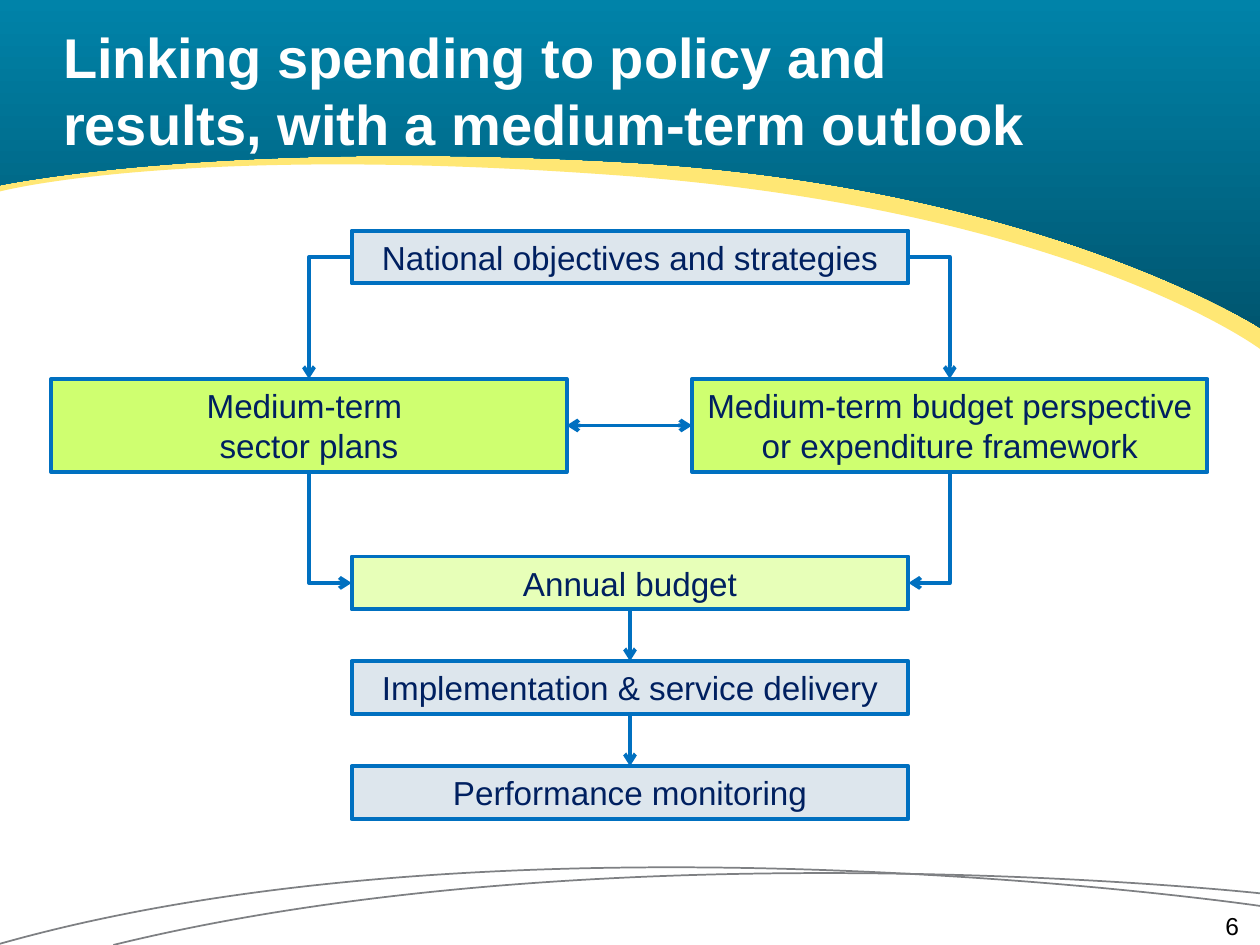
"""Build the slide on linking spending to policy and results."""
from lxml import etree
from pptx import Presentation
from pptx.dml.color import RGBColor
from pptx.enum.shapes import MSO_CONNECTOR, MSO_SHAPE
from pptx.enum.text import MSO_ANCHOR, PP_ALIGN
from pptx.oxml.ns import qn
from pptx.util import Pt

RECTANGLE = MSO_SHAPE.RECTANGLE
STRAIGHT, ELBOW = MSO_CONNECTOR.STRAIGHT, MSO_CONNECTOR.ELBOW
LEFT, CENTER, RIGHT = PP_ALIGN.LEFT, PP_ALIGN.CENTER, PP_ALIGN.RIGHT
TOP, MIDDLE = MSO_ANCHOR.TOP, MSO_ANCHOR.MIDDLE
TOP_SIDE, LEFT_SIDE, BOTTOM_SIDE, RIGHT_SIDE = range(4)
COLORS = {
    "teal": "0083A9", "deep_teal": "005670", "yellow": "FFE774",
    "grey": "7E8083", "blue": "0070C0", "navy": "002060",
    "pale_blue": "DDE6ED", "lime": "CFFF70", "pale_lime": "E7FFB8",
    "white": "FFFFFF", "black": "000000",
}
RGB = {name: RGBColor.from_string(value) for name, value in COLORS.items()}

prs = Presentation()
prs.slide_width, prs.slide_height = Pt(720), Pt(540)
slide = prs.slides.add_slide(prs.slide_layouts[6])
shapes = slide.shapes


def write_text(shape, text, size, color, align=LEFT, anchor=MIDDLE, bold=False, inset=None):
    frame = shape.text_frame
    frame.word_wrap = True
    frame.vertical_anchor = anchor
    if inset is not None:
        frame.margin_left = frame.margin_right = Pt(inset)
        frame.margin_top = frame.margin_bottom = Pt(inset)
    paragraph = frame.paragraphs[0]
    paragraph.text = text
    paragraph.alignment = align
    for run in paragraph.runs:
        run.font.name, run.font.size, run.font.bold = "Arial", Pt(size), bold
        run.font.color.rgb = RGB[color]


def add_arc(points, corners=()):
    emu = [(Pt(x), Pt(y)) for x, y in [*points, *corners]]
    builder = shapes.build_freeform(*emu[0])
    builder.add_line_segments(emu[1:], close=bool(corners))
    arc = builder.convert_to_shape()
    arc.shadow.inherit = False
    segments = list(arc._element.spPr.iter(qn("a:lnTo")))
    for first in range(0, len(points) - 1, 3):
        curve = etree.Element(qn("a:cubicBezTo"))
        segments[first].addprevious(curve)
        for segment in segments[first:first + 3]:
            curve.append(segment[0])
            segment.getparent().remove(segment)
    return arc


for arc_points in (
    [(720, 510.5), (720, 510.5), (349.2, 470.2), (64.8, 540)],
    [(720, 517.7), (720, 517.7), (295.2, 455.8), (0, 539.3)],
):
    footer_arc = add_arc(arc_points)
    footer_arc.fill.background()
    footer_arc.line.color.rgb = RGB["grey"]
    footer_arc.line.width = Pt(1)

page_top = [(0, -0.7), (720, -0.7)]
yellow_band = add_arc([(720, 199.4), (720, 199.4), (614.9, 121), (360.7, 100.8),
                       (105.8, 81.4), (0, 109.4), (0, 109.4)], page_top)
yellow_band.fill.solid()
yellow_band.fill.fore_color.rgb = RGB["yellow"]
yellow_band.line.fill.background()

teal_band = add_arc([(720, 187.2), (720, 187.2), (594.7, 106.6), (360.7, 92.9),
                     (126, 79.2), (0, 105.8), (0, 105.8)], page_top)
teal_band.fill.gradient()
teal_band.fill.gradient_angle = 270
for stop, color in zip(teal_band.fill.gradient_stops, ("teal", "deep_teal")):
    stop.color.rgb = RGB[color]
teal_band.line.fill.background()

title = shapes.add_textbox(Pt(36), Pt(6), Pt(672), Pt(90))
write_text(title, "Linking spending to policy and \nresults, with a medium-term outlook",
           size=32, color="white", bold=True, inset=0)

center_column = (200.9, 318.2, 30.2)
stages = {}
for key, text, (left, width, height), top, color in (
    ("objectives", "National objectives and strategies", center_column, 131.8, "pale_blue"),
    ("framework", "Medium-term budget perspective or expenditure framework",
     (395.5, 294.5, 53.3), 216.5, "lime"),
    ("sector", "Medium-term \nsector plans", (29.3, 294.5, 53.3), 216.5, "lime"),
    ("budget", "Annual budget", center_column, 318, "pale_lime"),
    ("delivery", "Implementation & service delivery", center_column, 377.8, "pale_blue"),
    ("monitoring", "Performance monitoring", center_column, 437.8, "pale_blue"),
):
    stage = shapes.add_shape(RECTANGLE, Pt(left), Pt(top), Pt(width), Pt(height))
    stage.shadow.inherit = False
    stage.fill.solid()
    stage.fill.fore_color.rgb = RGB[color]
    stage.line.color.rgb = RGB["blue"]
    stage.line.width = Pt(2.25)
    write_text(stage, text, size=19, color="navy", align=CENTER)
    stages[key] = stage

for source, source_side, target, target_side, kind, turn, flips, ends in (
    ("objectives", LEFT_SIDE, "sector", TOP_SIDE, ELBOW, 180, "V", ["tailEnd"]),
    ("objectives", RIGHT_SIDE, "framework", TOP_SIDE, ELBOW, 0, "", ["tailEnd"]),
    ("sector", RIGHT_SIDE, "framework", LEFT_SIDE, STRAIGHT, 0, "", ["headEnd", "tailEnd"]),
    ("sector", BOTTOM_SIDE, "budget", LEFT_SIDE, ELBOW, 270, "H", ["tailEnd"]),
    ("framework", BOTTOM_SIDE, "budget", RIGHT_SIDE, ELBOW, 90, "", ["tailEnd"]),
    ("budget", BOTTOM_SIDE, "delivery", TOP_SIDE, STRAIGHT, 0, "", ["tailEnd"]),
    ("delivery", BOTTOM_SIDE, "monitoring", TOP_SIDE, STRAIGHT, 0, "", ["tailEnd"]),
):
    link = shapes.add_connector(kind, 0, 0, 0, 0)
    link.begin_connect(stages[source], source_side)
    link.end_connect(stages[target], target_side)
    link.line.color.rgb = RGB["blue"]
    link.line.width = Pt(2.25)
    properties = link._element.spPr
    if kind == ELBOW:
        properties.find(qn("a:prstGeom")).set("prst", "bentConnector2")
        frame = properties.find(qn("a:xfrm"))
        frame.set("rot", str(turn * 60000))
        for axis in "HV":
            frame.set("flip" + axis, str(int(axis in flips)))
        if turn in (90, 270):
            width, height = link.width, link.height
            link.left += (width - height) // 2
            link.top += (height - width) // 2
            link.width, link.height = height, width
    for end in ends:
        etree.SubElement(properties.find(qn("a:ln")), qn("a:" + end), type="arrow")
    etree.SubElement(properties, qn("a:effectLst"))

page_number = shapes.add_textbox(Pt(540), Pt(520.6), Pt(168), Pt(13))
write_text(page_number, "6", size=14, color="black", align=RIGHT, anchor=TOP, inset=0)

prs.save("out.pptx")
